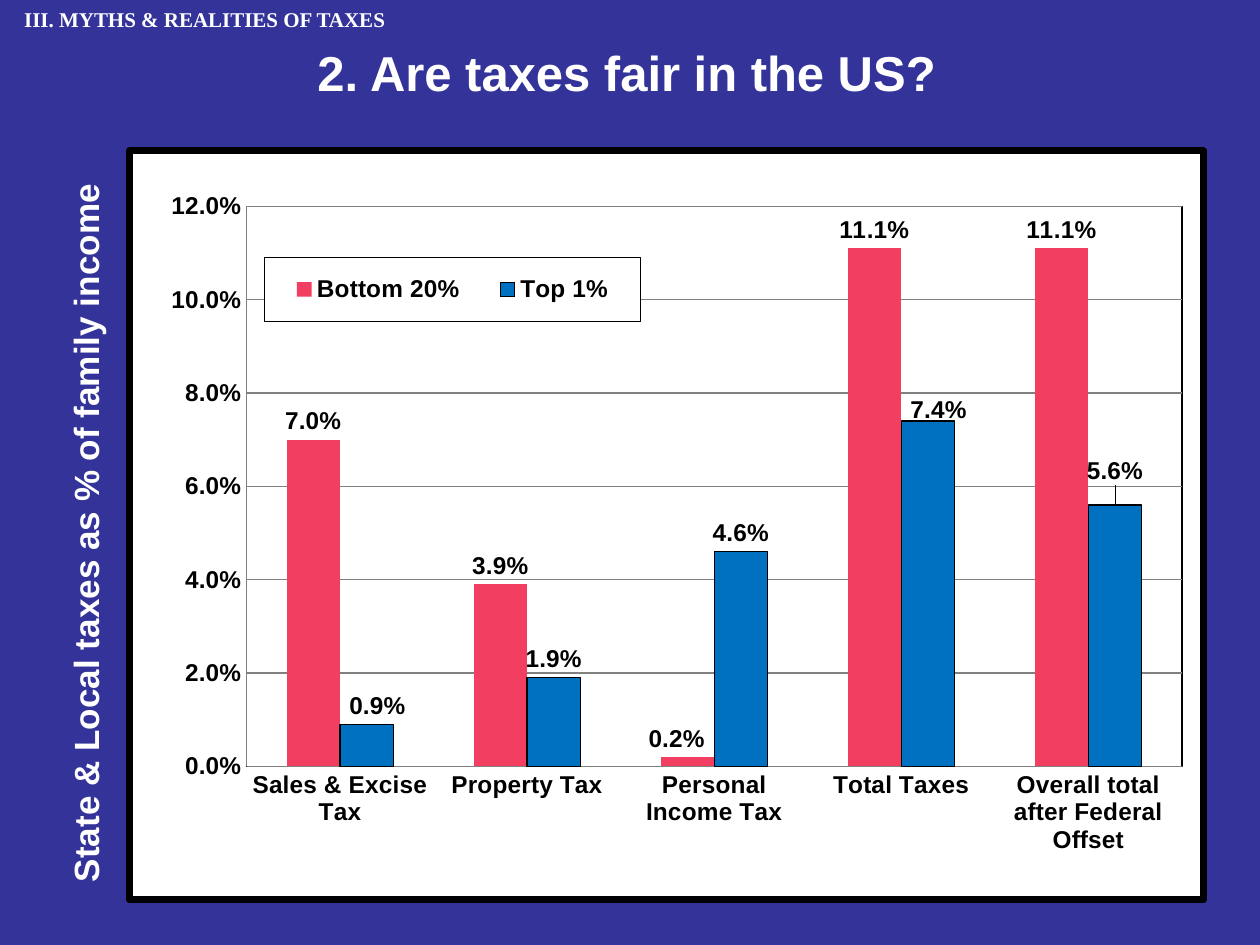
from lxml.etree import SubElement
from pptx import Presentation
from pptx.chart.data import CategoryChartData as Data
from pptx.dml.color import RGBColor
from pptx.enum.chart import XL_CHART_TYPE as Kind
from pptx.enum.chart import XL_LABEL_POSITION as Spot
from pptx.enum.chart import XL_LEGEND_POSITION as Side
from pptx.enum.chart import XL_TICK_MARK as Tick
from pptx.enum.shapes import MSO_SHAPE as Shape
from pptx.enum.text import PP_ALIGN as Align
from pptx.oxml import parse_xml
from pptx.oxml.ns import nsdecls, qn
from pptx.util import Cm, Pt

NAVY = RGBColor(0x33, 0x33, 0x99)
WHITE = RGBColor(0xFF, 0xFF, 0xFF)
BLACK = RGBColor(0, 0, 0)
GRAY = RGBColor(0x80, 0x80, 0x80)
ROSE = RGBColor(0xF2, 0x3E, 0x60)
BLUE = RGBColor(0, 0x70, 0xC0)

GROUPS = ["Sales & Excise Tax", "Property Tax", "Personal Income Tax",
          "Total Taxes", "Overall total after Federal Offset"]
SERIES = [
    ("Bottom 20%", ROSE, [0.07, 0.039, 0.002, 0.111, 0.111],
     {2: (-0.01, 0)}),
    ("Top 1%", BLUE, [0.009, 0.019, 0.046, 0.074, 0.056],
     {0: (0.01, 0), 3: (0.01, 0.01), 4: (0, -0.02)}),
]


def set_font(font, size, color, name="Arial"):
    font.name, font.size, font.bold = name, Pt(size), True
    font.color.rgb = color


def write(shape, text, size, name="Arial", align=Align.LEFT):
    frame = shape.text_frame
    frame.word_wrap = True
    frame.text = text
    para = frame.paragraphs[0]
    para.alignment = align
    set_font(para.runs[0].font, size, WHITE, name)


def add_head(slide, left, top, width, height):
    band = slide.shapes.add_shape(
        Shape.RECTANGLE, left, top, width, height)
    band.shadow.inherit = False
    band.fill.solid()
    band.fill.fore_color.rgb = NAVY
    band.line.fill.background()
    write(band, "III. MYTHS & REALITIES OF TAXES", 12,
          "Times New Roman", Align.CENTER)


def add_title(slide, left, top, width, height):
    box = slide.shapes.add_textbox(left, top, width, height)
    write(box, "2. Are taxes fair in the US?", 28)


def add_side(slide, left, top, width, height):
    shift = (height - width) // 2
    box = slide.shapes.add_textbox(
        left - shift, top + shift, height, width)
    box.rotation = 270
    write(box, "State & Local taxes as % of family income", 20)


def make_layout(modes, **sizes):
    layout = parse_xml(f"<c:layout {nsdecls('c')}/>")
    manual = SubElement(layout, qn("c:manualLayout"))
    for tag, val in {**modes, **sizes}.items():
        SubElement(manual, qn(f"c:{tag}")).set("val", str(val))
    return layout


def make_look(color, width, fill=None):
    paint = "<a:noFill/>"
    if fill is not None:
        paint = f'<a:solidFill><a:srgbClr val="{fill}"/></a:solidFill>'
    return parse_xml(
        f"<c:spPr {nsdecls('c', 'a')}>{paint}"
        f'<a:ln w="{Pt(width)}"><a:solidFill><a:srgbClr val="{color}"/>'
        "</a:solidFill></a:ln></c:spPr>")


def set_layout(node, layout, index):
    for old in node.findall(qn("c:layout")):
        node.remove(old)
    node.insert(index, layout)


def style_axes(chart):
    cat, val = chart.category_axis, chart.value_axis
    for axis in (cat, val):
        axis.major_tick_mark = axis.minor_tick_mark = Tick.NONE
        axis.format.line.color.rgb = GRAY
        set_font(axis.tick_labels.font, 14, BLACK)
    val.minimum_scale, val.maximum_scale = 0, 0.12
    val.major_unit = 0.02
    val.has_major_gridlines = True
    val.major_gridlines.format.line.color.rgb = GRAY
    val.tick_labels.number_format = "0.0%"
    val.tick_labels.number_format_is_linked = False


def style_bars(series, color, moves):
    series.invert_if_negative = False
    series.format.fill.solid()
    series.format.fill.fore_color.rgb = color
    if color == BLUE:
        series.format.line.color.rgb = BLACK
        series.format.line.width = Pt(0.75)
    else:
        series.format.line.fill.background()
    tags = series.data_labels
    tags.show_value = True
    tags.number_format, tags.number_format_is_linked = "0.0%", False
    tags.position = Spot.OUTSIDE_END
    set_font(tags.font, 14, BLACK)
    for index, (dx, dy) in moves.items():
        tag = series.points[index].data_label
        set_font(tag.font, 14, BLACK)
        tag.position = Spot.OUTSIDE_END
    for node in tags._element.findall(qn("c:dLbl")):
        dx, dy = moves[int(node.find(qn("c:idx")).get("val"))]
        set_layout(node, make_layout({}, x=dx, y=dy), 1)


def add_chart(slide, left, top, width, height):
    data = Data(number_format="0.0%")
    data.categories = GROUPS
    for name, _, vals, _ in SERIES:
        data.add_series(name, vals)
    chart = slide.shapes.add_chart(
        Kind.COLUMN_CLUSTERED, left, top, width, height, data).chart
    chart.has_title = False
    set_font(chart.font, 14, BLACK)
    style_axes(chart)
    plot = chart.plots[0]
    plot.gap_width, plot.overlap = 150, 0
    plot.vary_by_categories = False
    for series, (_, color, _, moves) in zip(plot.series, SERIES):
        style_bars(series, color, moves)

    chart.has_legend = True
    legend = chart.legend
    legend.position = Side.RIGHT
    legend.include_in_layout = True
    set_font(legend.font, 14, BLACK)
    edge = {"xMode": "edge", "yMode": "edge"}
    key = legend._element
    set_layout(key, make_layout(edge, x=0.126, y=0.142, w=0.35, h=0.086), 1)
    key.find(qn("c:txPr")).addprevious(make_look(BLACK, 0.75, WHITE))

    space = chart._chartSpace
    area = space.chart.plotArea
    inner = {"layoutTarget": "inner", **edge}
    set_layout(area, make_layout(
        inner, x=0.109, y=0.074, w=0.871, h=0.748), 0)
    area.append(make_look(BLACK, 0.75))
    space.chart.addnext(make_look(BLACK, 4, WHITE))


def main():
    deck = Presentation()
    deck.slide_width, deck.slide_height = Cm(25.4), Cm(19.05)
    slide = deck.slides.add_slide(deck.slide_layouts[6])
    slide.background.fill.solid()
    slide.background.fill.fore_color.rgb = NAVY
    add_title(slide, Cm(6.15), Cm(0.74), Cm(13.54), Cm(1.45))
    add_head(slide, Cm(0), Cm(0), Cm(8.26), Cm(0.76))
    add_side(slide, Cm(1.17), Cm(1.52), Cm(1.12), Cm(16.51))
    add_chart(slide, Cm(2.54), Cm(2.97), Cm(21.79), Cm(15.24))
    deck.save("out.pptx")


if __name__ == "__main__":
    main()
